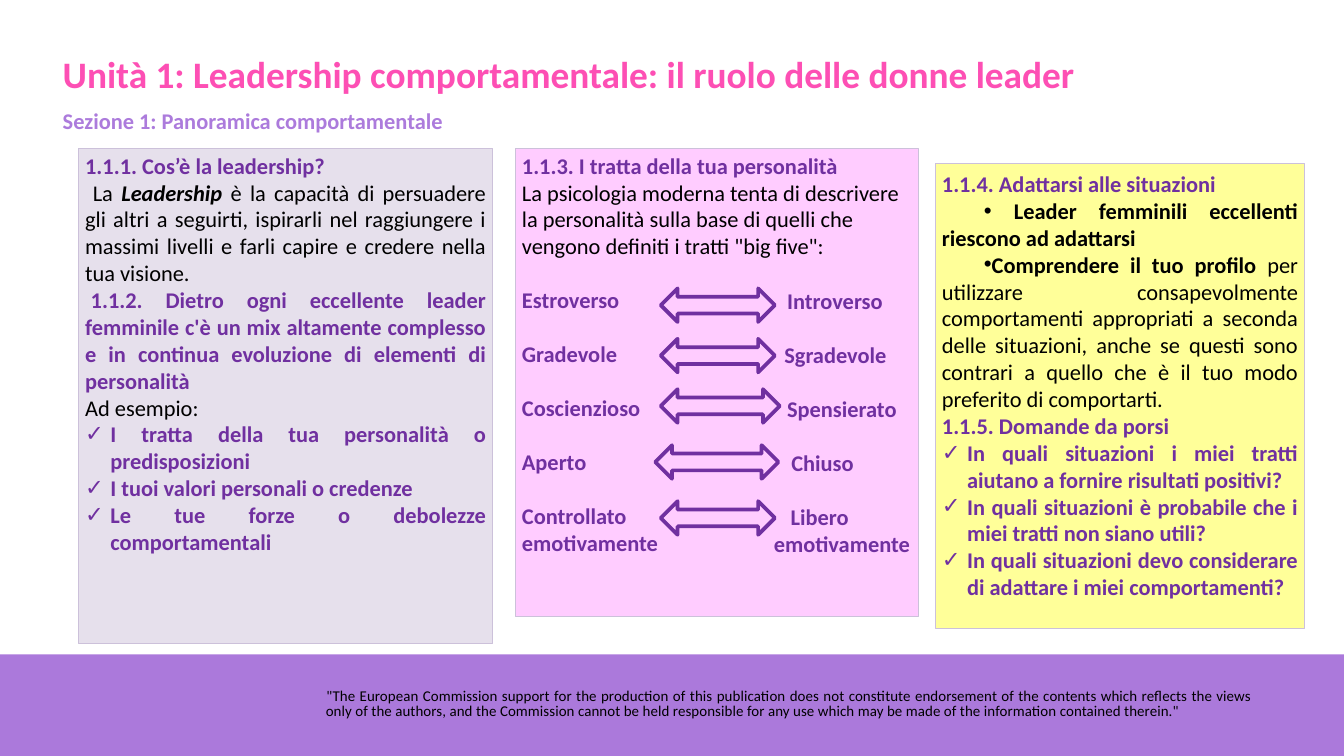
import pptx
import pptx.util
import pptx.dml.color
import pptx.enum.shapes
import pptx.enum.text
import pptx.oxml.ns
from lxml import etree

PX = 9525
PURPLE = "7030A0"
BLACK = "000000"
ALIGN = pptx.enum.text.PP_ALIGN
SHAPES = pptx.enum.shapes.MSO_SHAPE


def color(value):
    return pptx.dml.color.RGBColor.from_string(value)


def write(frame, text, size=24, fill=PURPLE, bold=True, italic=False, align=ALIGN.LEFT,
          margin=0, indent=0, bullet=None, before=0, spacing=None, tracking=None,
          continued=False):
    paragraph = frame.paragraphs[-1]
    if not continued:
        if paragraph.runs:
            paragraph = frame.add_paragraph()
        properties = paragraph._p.get_or_add_pPr()
        properties.set("marL", str(margin * PX))
        properties.set("indent", str(indent * PX))
        if bullet:
            etree.SubElement(properties, pptx.oxml.ns.qn("a:buChar"), char=bullet)
        else:
            etree.SubElement(properties, pptx.oxml.ns.qn("a:buNone"))
        paragraph.alignment = align
        paragraph.space_before = pptx.util.Pt(before)
        if spacing:
            paragraph.line_spacing = pptx.util.Pt(spacing)
    run = paragraph.add_run()
    run.text = text
    run.font.name = "Calibri"
    run.font.size = pptx.util.Pt(size)
    run.font.bold = bold
    run.font.italic = italic
    run.font.color.rgb = color(fill)
    if tracking:
        run._r.get_or_add_rPr().set("spc", str(tracking))


presentation = pptx.Presentation()
presentation.slide_width = 1920 * PX
presentation.slide_height = 1080 * PX
slide = presentation.slides.add_slide(presentation.slide_layouts[4])

footer = slide.shapes.add_shape(SHAPES.RECTANGLE, 0, 935 * PX, 1920 * PX, 145 * PX)
footer.shadow.inherit = False
footer.fill.solid()
footer.fill.fore_color.rgb = color("AB79DB")
footer.line.fill.background()

disclaimer = slide.shapes.add_textbox(456 * PX, 980 * PX, 1344 * PX, 53 * PX)
disclaimer.text_frame.word_wrap = True
write(disclaimer.text_frame,
      '"The European Commission support for the production of this publication does not constitute '
      'endorsement of the contents which reflects the views only of the authors, and the Commission '
      'cannot be held responsible for any use which may be made of the information contained therein."',
      size=16, fill=BLACK, bold=False, align=ALIGN.JUSTIFY, indent=1, spacing=16.1, tracking=10)

placements = [
    (0, 80, 68, 1568, 74, None),
    (1, 80, 148, 567, 48, None),
    (2, 112, 212, 592, 707, "E6E0EC"),
    (3, 736, 212, 576, 669, "FFCCFF"),
    (4, 1336, 234, 528, 663, "FFFF99"),
]
frames = []
for index, left, top, width, height, background in placements:
    shape = slide.placeholders[index]
    shape.left, shape.top = left * PX, top * PX
    shape.width, shape.height = width * PX, height * PX
    shape.text_frame.auto_size = pptx.enum.text.MSO_AUTO_SIZE.NONE
    shape.text_frame.vertical_anchor = pptx.enum.text.MSO_ANCHOR.TOP
    shape.text_frame.word_wrap = True
    if background:
        shape.fill.solid()
        shape.fill.fore_color.rgb = color(background)
        shape.line.color.rgb = color("CCC1DA")
        shape.line.width = pptx.util.Pt(0.75)
    frames.append(shape.text_frame)
title, section, leadership, personality, situations = frames

write(title, "Unità 1: Leadership comportamentale: il ruolo delle donne leader", size=40, fill="FD4FB4")
section.word_wrap = False
write(section, "Sezione 1: Panoramica comportamentale", fill="AC7BDC")

write(leadership, "1.1.1. Cos’è la leadership?")
write(leadership, "La ", fill=BLACK, bold=False, align=ALIGN.JUSTIFY, indent=11)
write(leadership, "Leadership ", fill=BLACK, italic=True, continued=True)
write(leadership, "è la capacità di persuadere gli altri a seguirti, ispirarli nel raggiungere i massimi "
      "livelli e farli capire e credere nella tua visione.", fill=BLACK, bold=False, continued=True)
write(leadership, "1.1.2. Dietro ogni eccellente leader femminile c'è un mix altamente complesso e in "
      "continua evoluzione di elementi di personalità", align=ALIGN.JUSTIFY, indent=8)
write(leadership, "Ad esempio:", fill=BLACK, bold=False, align=ALIGN.JUSTIFY)
for element in ["I tratta della tua personalità o predisposizioni",
                "I tuoi valori personali o credenze",
                "Le tue forze o debolezze comportamentali"]:
    write(leadership, element, align=ALIGN.JUSTIFY, margin=36, indent=-36, bullet="✓")

write(personality, "1.1.3. I tratta della tua personalità")
write(personality, "La psicologia moderna tenta di descrivere la personalità sulla base di quelli che "
      'vengono definiti i tratti "big five":', fill=BLACK, bold=False)

opposites = slide.shapes.add_textbox(1096 * PX, 406 * PX, 216 * PX, 394 * PX).text_frame
opposites.word_wrap = True
opposites.margin_right = 0
for trait, opposite, margin, gap_above, opposite_gap in [
    ("Estroverso", "Introverso", 19, 29, 0),
    ("Gradevole", "Sgradevole", 15, 29, 29),
    ("Coscienzioso", "Spensierato", 19, 29, 29),
    ("Aperto", "Chiuso", 25, 29, 29),
    ("Controllato", "Libero", 24, 29, 29),
    ("emotivamente", "emotivamente", 0, 0, 0),
]:
    write(personality, trait, before=gap_above)
    write(opposites, opposite, margin=margin, before=opposite_gap)

for left, top, width in [(944, 412, 163), (944, 484, 163), (944, 556, 170),
                         (936, 636, 176), (944, 716, 163)]:
    arrow = slide.shapes.add_shape(SHAPES.LEFT_RIGHT_ARROW, left * PX, top * PX, width * PX, 48 * PX)
    arrow.shadow.inherit = False
    arrow.fill.background()
    arrow.line.color.rgb = color(PURPLE)
    arrow.line.width = pptx.util.Pt(4)

situations.margin_top = 9 * PX
write(situations, "1.1.4. Adattarsi alle situazioni", align=ALIGN.JUSTIFY)
write(situations, " Leader femminili eccellenti riescono ad adattarsi", fill=BLACK,
      align=ALIGN.JUSTIFY, indent=60, bullet="•")
write(situations, "Comprendere il tuo profilo ", fill=BLACK, align=ALIGN.JUSTIFY, indent=60, bullet="•")
write(situations, "per utilizzare consapevolmente comportamenti appropriati a seconda delle situazioni, "
      "anche se questi sono contrari a quello che è il tuo modo preferito di comportarti.",
      fill=BLACK, bold=False, continued=True)
write(situations, "1.1.5. Domande da porsi", align=ALIGN.JUSTIFY)
for question in ["In quali situazioni i miei tratti aiutano a fornire risultati positivi?",
                 "In quali situazioni è probabile che i miei tratti non siano utili?",
                 "In quali situazioni devo considerare di adattare i miei comportamenti?"]:
    write(situations, question, align=ALIGN.JUSTIFY, margin=36, indent=-36, bullet="✓")

presentation.save("out.pptx")
